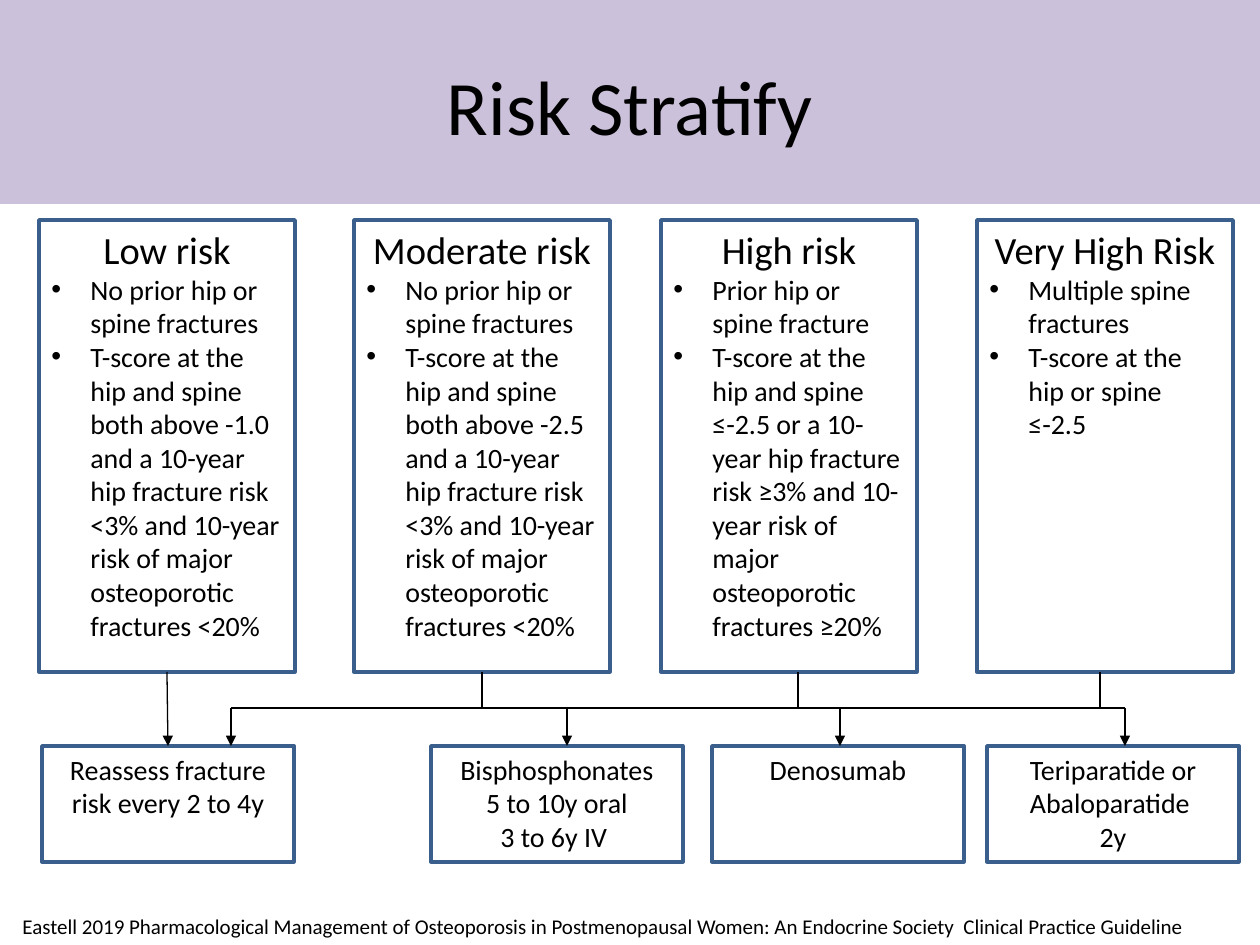
from lxml.etree import SubElement
from pptx import Presentation
from pptx.dml.color import RGBColor
from pptx.enum.shapes import MSO_CONNECTOR, MSO_SHAPE
from pptx.enum.text import MSO_ANCHOR, PP_ALIGN
from pptx.oxml.ns import qn
from pptx.util import Pt

SCALE = 914400 / 126
HUES = {"band": "CCC1DA", "edge": "3A5F8C", "fill": "FFFFFF", "ink": "000000"}
FONT = "Calibri"
BOTTOM, TOP = 2, 0


def px(*sizes):
    return [round(size * SCALE) for size in sizes]


def hue(name):
    return RGBColor.from_string(HUES[name])


class Deck:
    def __init__(self, wide, high):
        self.file = Presentation()
        self.file.slide_width, self.file.slide_height = px(wide, high)
        self.slide = self.file.slides.add_slide(self.file.slide_layouts[5])
        self.shapes = self.slide.shapes

    def label(self, para, text, size, align=PP_ALIGN.LEFT):
        para.alignment = align
        run = para.add_run()
        run.text = text
        look = {"name": FONT, "size": Pt(size)}
        for key, value in look.items():
            setattr(run.font, key, value)
        run.font.color.rgb = hue("ink")

    def rect(self, area, fill, edge=None):
        shape = self.shapes.add_shape(MSO_SHAPE.RECTANGLE, *px(*area))
        shape.shadow.inherit = False
        shape.fill.solid()
        shape.fill.fore_color.rgb = hue(fill)
        if edge:
            shape.line.color.rgb = hue(edge)
            shape.line.width = Pt(2)
        else:
            shape.line.fill.background()
        return shape

    def title(self, area, text):
        shape = self.shapes.title
        self.shapes._spTree.append(shape._element)  # bring in front of the band
        look = dict(zip(("left", "top", "width", "height"), px(*area)))
        for key, value in look.items():
            setattr(shape, key, value)
        shape.text_frame.vertical_anchor = MSO_ANCHOR.MIDDLE
        self.label(shape.text_frame.paragraphs[0], text, 44, PP_ALIGN.CENTER)

    def note(self, area, text):
        frame = self.shapes.add_textbox(*px(*area)).text_frame
        frame.word_wrap = True
        self.label(frame.paragraphs[0], text, 12)

    def box(self, area, heads, size, points=()):
        """Draw an outlined box of centred lines, then bulleted points."""
        shape = self.rect(area, "fill", "edge")
        frame = shape.text_frame
        frame.word_wrap = True
        frame.vertical_anchor = MSO_ANCHOR.TOP
        for i, text in enumerate(heads):
            para = frame.add_paragraph() if i else frame.paragraphs[0]
            self.label(para, text, size, PP_ALIGN.CENTER)
        for text in points:
            para = frame.add_paragraph()
            self.label(para, text, 16)
            self.bullet(para)
        return shape

    def bullet(self, para):
        props = para._p.get_or_add_pPr()
        indent, = px(39)
        props.set("marL", str(indent))
        props.set("indent", str(-indent))
        SubElement(props, qn("a:buFont"), typeface="Arial")
        SubElement(props, qn("a:buChar"), char="•")

    def line(self, start, end, arrow=False):
        link = self.shapes.add_connector(MSO_CONNECTOR.STRAIGHT, *px(*start, *end))
        link.line.color.rgb = hue("ink")
        link.line.width = Pt(0.75)
        if arrow:
            SubElement(link.line._get_or_add_ln(), qn("a:tailEnd"), type="triangle")
        SubElement(link._element.spPr, qn("a:effectLst"))
        return link


SCORE = ("T-score at the hip and spine {0} 10-year hip fracture risk {1}3% "
         "and 10-year risk of major osteoporotic fractures {1}20%")
RISKS = [
    (39, "Low risk", "No prior hip or spine fractures",
     SCORE.format("both above -1.0 and a", "<")),
    (354, "Moderate risk", "No prior hip or spine fractures",
     SCORE.format("both above -2.5 and a", "<")),
    (661, "High risk", "Prior hip or spine fracture",
     SCORE.format("≤-2.5 or a", "≥")),
    (977, "Very High Risk", "Multiple spine fractures",
     "T-score at the hip or spine ≤-2.5"),
]
CARES = [
    (42, ["Reassess fracture risk every 2 to 4y"]),
    (431, ["Bisphosphonates", "5 to 10y oral", "3 to 6y IV "]),
    (712, ["Denosumab"]),
    (987, ["Teriparatide or Abaloparatide ", "2y"]),
]
RISK_END, BUS, CARE_TOP = 672, 708, 746
STEMS = [482, 798, 1100]
DROPS = [231, 567, 840, 1125]


def main():
    deck = Deck(1260, 945)
    deck.rect((0, 0, 1260, 204), "band")
    deck.title((63, 26, 1134, 158), "Risk Stratify")
    deck.note((10, 907, 1228, 38),
              "Eastell 2019 Pharmacological Management of Osteoporosis in "
              "Postmenopausal Women: An Endocrine Society  Clinical Practice Guideline")

    risks = [deck.box((x, 220, 256, RISK_END - 220), [head], 22, points)
             for x, head, *points in RISKS]
    cares = [deck.box((x, CARE_TOP, 252, 116), lines, 16) for x, lines in CARES]

    low = deck.line((167, RISK_END), (168, CARE_TOP), arrow=True)
    low.begin_connect(risks[0], BOTTOM)
    low.end_connect(cares[0], TOP)
    stems = [deck.line((x, RISK_END), (x, BUS)) for x in STEMS]
    stems[0].begin_connect(risks[1], BOTTOM)
    deck.line((DROPS[-1], BUS), (DROPS[0], BUS))
    for x in DROPS:
        deck.line((x, BUS), (x, CARE_TOP), arrow=True)

    deck.file.save("out.pptx")


if __name__ == "__main__":
    main()
